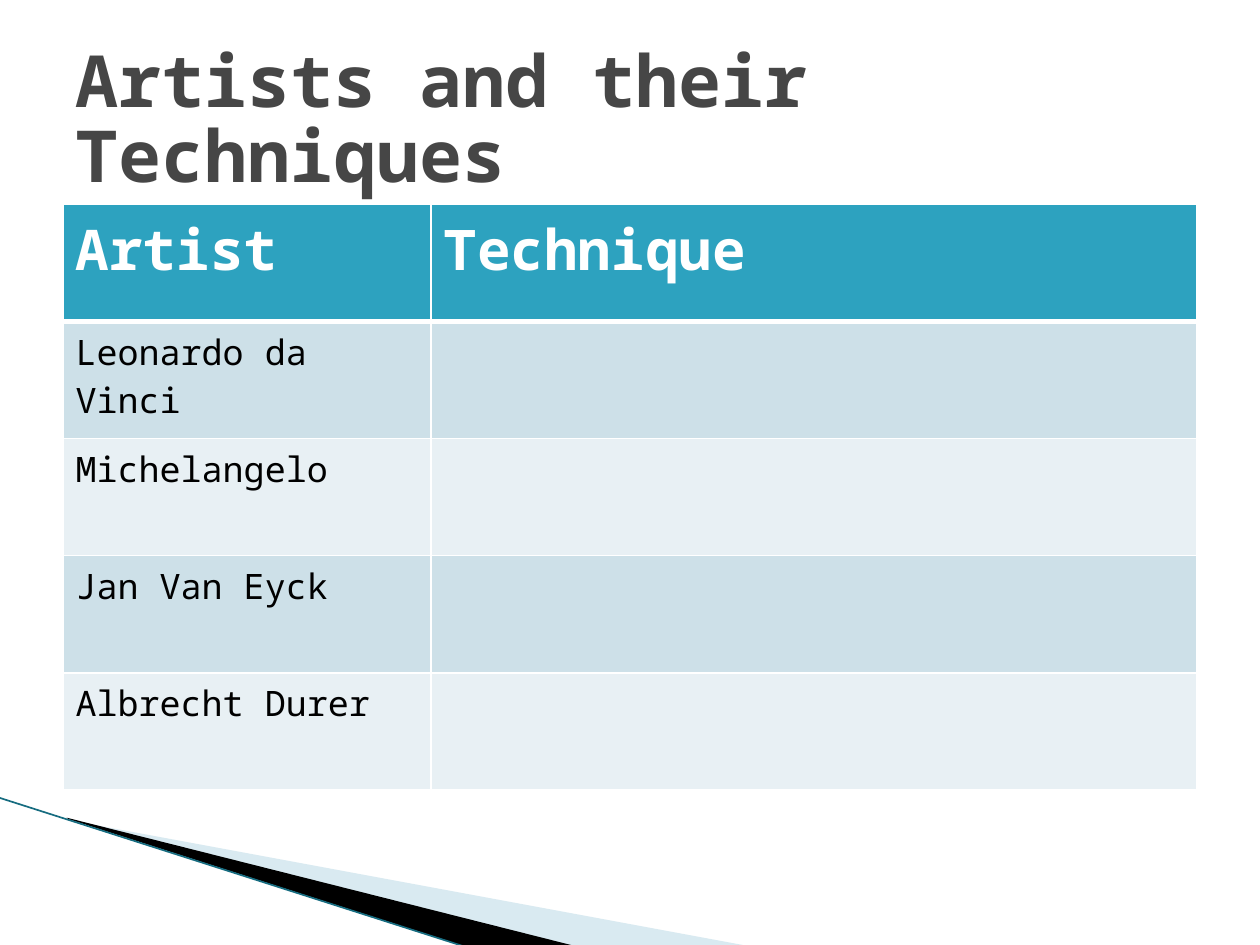
from lxml import etree
from pptx import Presentation
from pptx.dml.color import RGBColor
from pptx.enum.shapes import MSO_CONNECTOR
from pptx.enum.text import MSO_ANCHOR, MSO_AUTO_SIZE, PP_ALIGN
from pptx.oxml.ns import qn
from pptx.util import Inches, Pt

LINE = MSO_CONNECTOR.STRAIGHT
MIDDLE = MSO_ANCHOR.MIDDLE
LEFT = PP_ALIGN.LEFT
NO_FIT = MSO_AUTO_SIZE.NONE

FONT = "Noto Sans Mono"
WHITE = RGBColor(0xFF, 0xFF, 0xFF)
BLACK = RGBColor(0, 0, 0)
GREY = RGBColor(0x46, 0x46, 0x46)
TEAL = RGBColor(0x2D, 0xA2, 0xBF)
DEEP = RGBColor(0x16, 0x6C, 0x80)
PALE = RGBColor(0xA0, 0xCB, 0xDC)
BANDS = [RGBColor(0xCD, 0xE0, 0xE8), RGBColor(0xE8, 0xF0, 0xF4)]

# Content
TITLE = "Artists and their Techniques"
ROWS = [
    ("Artist", "Technique"),
    ("Leonardo da Vinci", ""),
    ("Michelangelo", ""),
    ("Jan Van Eyck", ""),
    ("Albrecht Durer", ""),
]
WIDTHS = [2.92, 6.08]
ROW_H = 0.93
# Corner wedges: points, colour, opacity in percent
WEDGES = [
    ([(0.55, 6.51), (5.95, 7.51), (4.56, 7.51), (0.55, 6.5)], PALE, 40),
    ([(0.53, 6.49), (4.57, 7.51), (3.72, 7.52), (0.54, 6.5)], BLACK, 100),
]
EDGE = [(-0.01, 6.33), (3.71, 7.52)]


def style(para, size, color, bold):
    para.alignment = LEFT
    font = para.font
    font.name, font.size, font.bold = FONT, Pt(size), bold
    font.color.rgb = color
    for run in para.runs:
        run.font.name, run.font.size, run.font.bold = FONT, Pt(size), bold
        run.font.color.rgb = color


def add_wedge(shapes, points, color, alpha):
    spots = [(Inches(x), Inches(y)) for x, y in points]
    path = shapes.build_freeform(*spots[0])
    path.add_line_segments(spots[1:], close=True)
    wedge = path.convert_to_shape()
    wedge.shadow.inherit = False
    wedge.line.fill.background()
    wedge.fill.solid()
    wedge.fill.fore_color.rgb = color
    if alpha < 100:
        tone = wedge._element.spPr.find(".//" + qn("a:srgbClr"))
        etree.SubElement(tone, qn("a:alpha"), val=str(alpha * 1000))


def add_edge(shapes):
    (x1, y1), (x2, y2) = EDGE
    edge = shapes.add_connector(LINE, Inches(x1), Inches(y1), Inches(x2), Inches(y2))
    edge.line.color.rgb = DEEP
    edge.line.width = Pt(0.95)
    etree.SubElement(edge._element.spPr, qn("a:effectLst"))


def set_borders(cell, row):
    props = cell._tc.get_or_add_tcPr()
    widths = {"L": 1, "R": 1, "T": 3 if row == 1 else 1, "B": 3 if row == 0 else 1}
    for i, (side, width) in enumerate(widths.items()):
        line = etree.Element(qn("a:ln" + side), w=str(Pt(width)))
        fill = etree.SubElement(line, qn("a:solidFill"))
        etree.SubElement(fill, qn("a:srgbClr"), val=str(WHITE))
        props.insert(i, line)


def add_grid(shapes):
    grid = shapes.add_table(
        len(ROWS), len(WIDTHS), Inches(0.5), Inches(1.62),
        Inches(sum(WIDTHS)), Inches(ROW_H * len(ROWS))).table
    for col, width in zip(grid.columns, WIDTHS):
        col.width = Inches(width)
    for r, texts in enumerate(ROWS):
        grid.rows[r].height = Inches(ROW_H)
        head = r == 0
        for c, text in enumerate(texts):
            cell = grid.cell(r, c)
            cell.text_frame.text = text
            style(cell.text_frame.paragraphs[0], 32 if head else 20,
                  WHITE if head else BLACK, head)
            cell.fill.solid()
            cell.fill.fore_color.rgb = TEAL if head else BANDS[(r - 1) % 2]
            set_borders(cell, r)


def set_title(title):
    title.left, title.top = Inches(0.5), Inches(0.3)
    title.width, title.height = Inches(9), Inches(1.25)
    frame = title.text_frame
    frame.text = TITLE
    frame.word_wrap = True
    frame.auto_size = NO_FIT
    frame.vertical_anchor = MIDDLE
    frame.margin_top, frame.margin_bottom = Inches(0.1), 0
    para = frame.paragraphs[0]
    para.line_spacing = 0.87
    style(para, 41, GREY, True)


def main():
    deck = Presentation()
    deck.slide_width, deck.slide_height = Inches(10), Inches(7.5)
    slide = deck.slides.add_slide(deck.slide_layouts[5])
    shapes = slide.shapes
    # Corner decoration
    for wedge in WEDGES:
        add_wedge(shapes, *wedge)
    add_edge(shapes)
    # Table, then the title in front of it
    add_grid(shapes)
    set_title(shapes.title)
    shapes._spTree.append(shapes.title._element)
    deck.save("out.pptx")


if __name__ == "__main__":
    main()
